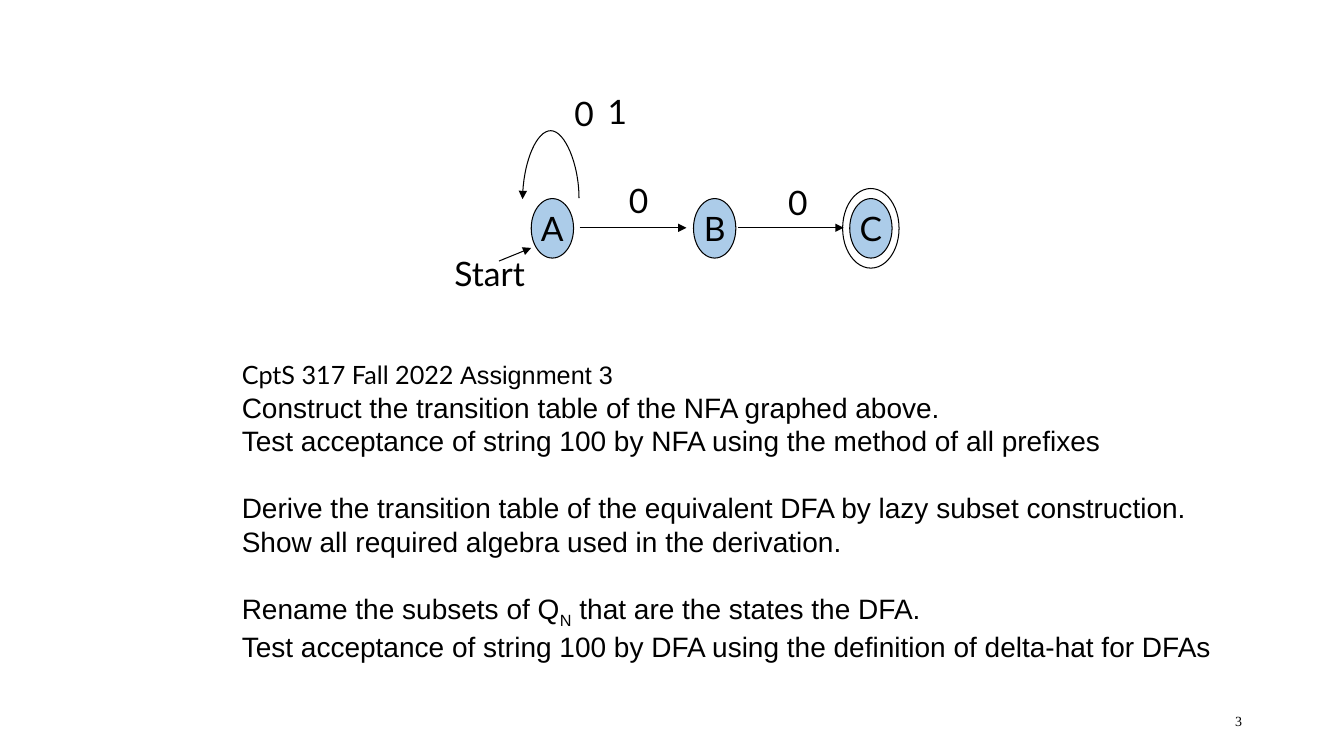
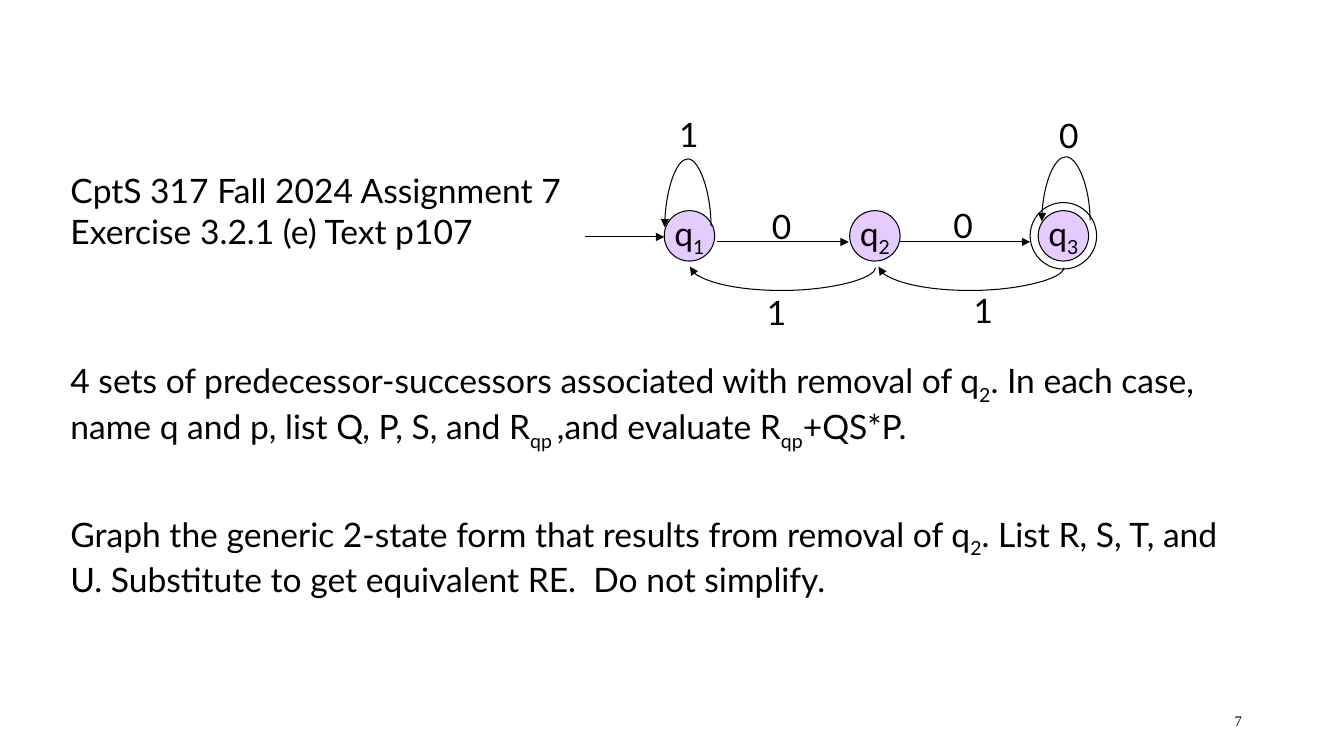
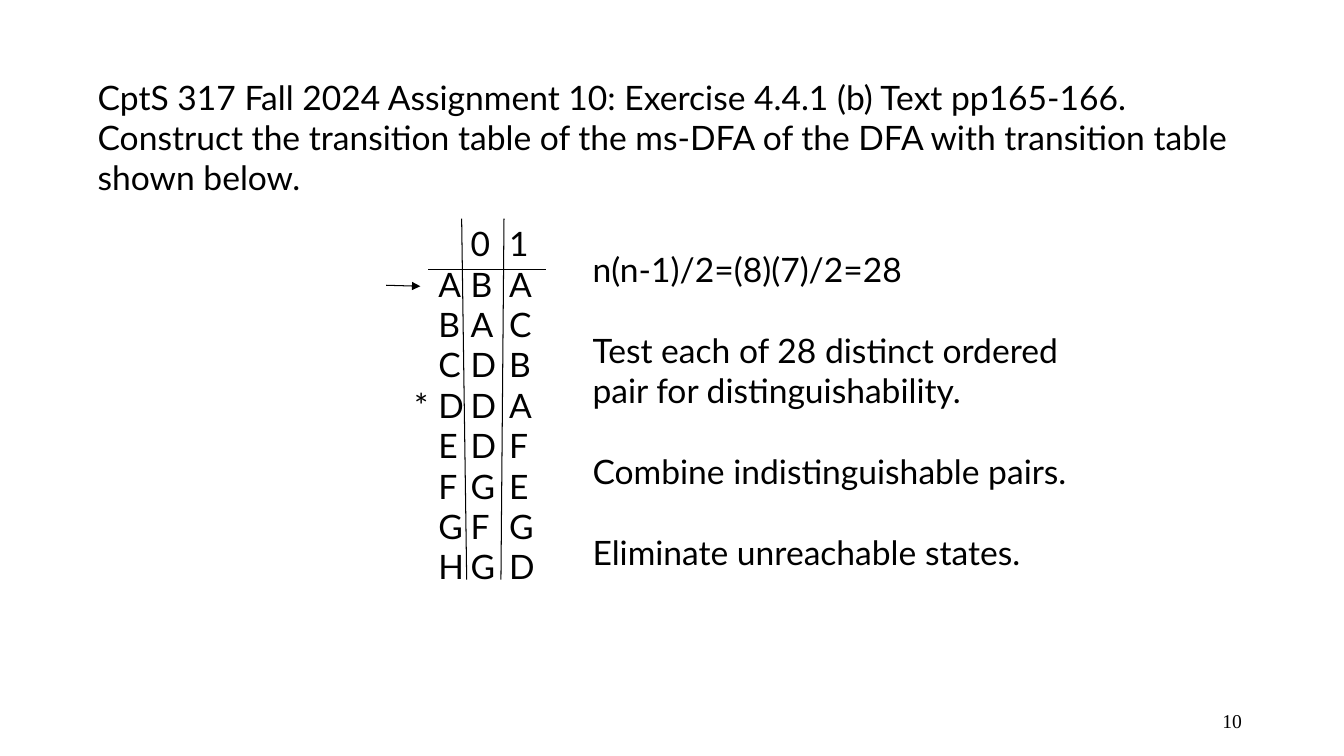
from dataclasses import dataclass

from lxml.etree import SubElement
from pptx import Presentation
from pptx.dml.color import RGBColor
from pptx.enum.shapes import MSO_CONNECTOR, MSO_SHAPE
from pptx.enum.text import MSO_ANCHOR, PP_ALIGN
from pptx.oxml.ns import qn
from pptx.util import Pt

EMU_PER_PX = 9144  # 100 px to the inch


@dataclass(frozen=True)
class Theme:
    ink: str = "000000"
    blue: str = "5B9BD5"
    violet: str = "CC99FF"
    state_opacity: int = 50
    line_width: float = 0.75
    sans: str = "Lato"
    plain: str = "Arial"
    serif: str = "Times New Roman"
    body: int = 24
    task: int = 20
    course: int = 18


THEME = Theme()


@dataclass
class Run:
    text: str
    font: str = THEME.sans
    size: float = THEME.body
    subscript: bool = False


@dataclass
class Line:
    runs: list
    before: int = 0  # points
    spacing: int = 0  # exact line height in points, 0 for single


def px(length):
    return length * EMU_PER_PX


def color(value):
    return RGBColor.from_string(value)


def marked(text, font=THEME.sans, size=THEME.body):
    """Split text into runs; the parts between ~ signs are subscripts."""
    return [Run(part, font, size, index % 2 == 1)
            for index, part in enumerate(text.split("~")) if part]


# Text

def add_runs(paragraph, runs):
    for item in runs:
        run = paragraph.add_run()
        run.text = item.text
        run.font.name = item.font
        run.font.size = Pt(item.size)
        run.font.color.rgb = color(THEME.ink)
        if item.subscript:
            run.font._element.set("baseline", "-25000")


def add_text(slide, left, top, width, height, lines,
             align=PP_ALIGN.LEFT, anchor=MSO_ANCHOR.TOP):
    box = slide.shapes.add_textbox(px(left), px(top), px(width), px(height))
    frame = box.text_frame
    frame.word_wrap = True
    frame.vertical_anchor = anchor
    for index, line in enumerate(lines):
        paragraph = frame.add_paragraph() if index else frame.paragraphs[0]
        paragraph.alignment = align
        paragraph.space_before = Pt(line.before)
        if line.spacing:
            paragraph.line_spacing = Pt(line.spacing)
        add_runs(paragraph, line.runs)


def add_label(slide, left, top, text, width=45):
    add_text(slide, left, top, width, 50, [Line(marked(text))])


# Lines

def style_connector(connector, arrow):
    connector.line.color.rgb = color(THEME.ink)
    connector.line.width = Pt(THEME.line_width)
    if arrow:
        SubElement(connector.line._get_or_add_ln(), qn("a:tailEnd"), type="triangle")
    SubElement(connector._element.spPr, qn("a:effectLst"))


def add_straight(slide, begin_x, begin_y, end_x, end_y, arrow=True):
    connector = slide.shapes.add_connector(
        MSO_CONNECTOR.STRAIGHT, px(begin_x), px(begin_y), px(end_x), px(end_y))
    style_connector(connector, arrow)


def add_curve(slide, begin_x, end_x, y, depth):
    """Arrow from right to left, bulging up (depth > 0) or down (depth < 0)."""
    upward = depth > 0
    center = (begin_x + end_x) // 2
    half = (begin_x - end_x) // 2
    first, last = (y + half, y - half) if upward else (y - half, y + half)
    connector = slide.shapes.add_connector(
        MSO_CONNECTOR.CURVE, px(center + 1), px(first), px(center), px(last))
    properties = connector._element.spPr
    # The connector is one px thick and turned, so its bend is depth times that
    properties.find(qn("a:xfrm")).set("rot", "16200000" if upward else "5400000")
    adjustments = properties.find(qn("a:prstGeom")).find(qn("a:avLst"))
    SubElement(adjustments, qn("a:gd"), name="adj1", fmla=f"val {-abs(depth) * 100000}")
    style_connector(connector, arrow=True)


# Automaton

def add_ellipse(slide, left, top, width, height, fill=None):
    shape = slide.shapes.add_shape(
        MSO_SHAPE.OVAL, px(left), px(top), px(width), px(height))
    shape.shadow.inherit = False
    shape.line.color.rgb = color(THEME.ink)
    shape.line.width = Pt(THEME.line_width)
    if fill:
        shape.fill.solid()
        shape.fill.fore_color.rgb = color(fill)
        tint = shape._element.spPr.find(qn("a:solidFill"))[0]
        SubElement(tint, qn("a:alpha"), val=str(THEME.state_opacity * 1000))
    else:
        shape.fill.background()
    return shape


def add_automaton(slide, left, top, states, state_top, state_size, ring, fill,
                  arrows, curves, labels):
    """States are (x, name); the last one is accepting and gets a ring."""
    width, height = state_size
    for x, name in states:
        shape = add_ellipse(slide, left + x, top + state_top, width, height, fill)
        frame = shape.text_frame
        frame.word_wrap = False
        frame.vertical_anchor = MSO_ANCHOR.MIDDLE
        frame.paragraphs[0].alignment = PP_ALIGN.CENTER
        add_runs(frame.paragraphs[0], marked(name))
    pad_x, pad_y = ring
    add_ellipse(slide, left + states[-1][0] - pad_x, top + state_top - pad_y,
                width + 2 * pad_x, height + 2 * pad_y)
    for begin_x, begin_y, end_x, end_y in arrows:
        add_straight(slide, left + begin_x, top + begin_y, left + end_x, top + end_y)
    for begin_x, end_x, y, depth in curves:
        add_curve(slide, left + begin_x, left + end_x, top + y, depth)
    for x, y, text in labels:
        add_label(slide, left + x, top + y, text)


# Transition table

def add_transition_table(slide, left, top, rows):
    columns, header_height, row_height = (35, 40, 42), 45, 40
    margins = (10, 7, 5)
    width = sum(columns)
    height = header_height + row_height * (len(rows) - 1)
    frame = slide.shapes.add_table(
        len(rows), len(columns), px(left), px(top), px(width), px(height))
    table = frame.table
    table.first_row = table.horz_banding = False
    for column, column_width in zip(table.columns, columns):
        column.width = px(column_width)
    for row_index, row in enumerate(rows):
        table.rows[row_index].height = px(row_height if row_index else header_height)
        for column_index, text in enumerate(row):
            cell = table.cell(row_index, column_index)
            cell.margin_left = px(margins[column_index])
            cell.margin_right = cell.margin_top = cell.margin_bottom = 0
            cell.vertical_anchor = MSO_ANCHOR.BOTTOM
            cell.fill.background()
            add_runs(cell.text_frame.paragraphs[0], marked(text))
    # Rules, the upright ones slightly slanted
    for begin_x, begin_y, end_x, end_y in (
            (33, 0, 38, 358), (75, 0, 72, 358), (0, 50, width, 50)):
        add_straight(slide, left + begin_x, top + begin_y,
                     left + end_x, top + end_y, arrow=False)
    # Marks for the start state and the accepting state
    add_straight(slide, left - 42, top + 66, left - 8, top + 67)
    add_label(slide, left - 24, top + 160, "*")


# Slides

def new_slide(presentation, number, number_size):
    slide = presentation.slides.add_slide(presentation.slide_layouts[6])
    add_text(slide, 942, 695, 300, 40,
             [Line([Run(number, THEME.serif, number_size)])],
             PP_ALIGN.RIGHT, MSO_ANCHOR.MIDDLE)
    return slide


def build_nfa_slide(presentation):
    slide = new_slide(presentation, "3", 10)
    tasks = [
        ("Construct the transition table of the NFA graphed above.", 0),
        ("Test acceptance of string 100 by NFA using the method of all prefixes", 0),
        ("Derive the transition table of the equivalent DFA by lazy subset construction.", 24),
        ("Show all required algebra used in the derivation.", 0),
        ("Rename the subsets of Q~N~ that are the states the DFA.", 27),
        ("Test acceptance of string 100 by DFA using the definition of delta-hat for DFAs", 0),
    ]
    heading = Line([Run("CptS 317 Fall 2022 ", size=THEME.course),
                    Run("Assignment 3", THEME.plain, THEME.course)])
    add_text(slide, 230, 352, 1011, 343, [heading] + [
        Line(marked(text, THEME.plain, THEME.task), before, 24) for text, before in tasks])
    add_automaton(
        slide, 441, 85,
        states=[(86, "A"), (247, "B"), (402, "C")],
        state_top=112, state_size=(42, 59), ring=(7, 10), fill=THEME.blue,
        arrows=[(54, 174, 86, 161), (134, 141, 240, 141), (291, 141, 396, 141)],
        curves=[(133, 77, 112, 68)],
        labels=[(119, 2, "0"), (152, 0, "1"), (173, 89, "0"), (331, 91, "0")])
    add_label(slide, 441, 246, "Start", 95)


def build_elimination_slide(presentation):
    slide = new_slide(presentation, "7", 10.5)
    add_text(slide, 60, 164, 1182, 431, [
        Line(marked("CptS 317 Fall 2024 Assignment 7")),
        Line(marked("Exercise 3.2.1 (e) Text p107")),
        Line(marked("4 sets of predecessor-successors associated with removal of q~2~. "
                    "In each case, name q and p, list Q, P, S, and R~qp ~,and evaluate "
                    "R~qp~+QS*P."), 78),
        Line(marked("Graph the generic 2-state form that results from removal of q~2~. "
                    "List R, S, T, and U. Substitute to get equivalent RE.  "
                    "Do not simplify."), 44),
    ])
    add_automaton(
        slide, 580, 108,
        states=[(79, "q~1~"), (263, "q~2~"), (450, "q~3~")],
        state_top=101, state_size=(50, 50), ring=(8, 8), fill=THEME.violet,
        arrows=[(0, 127, 79, 127), (131, 132, 262, 132), (312, 132, 442, 132)],
        curves=[(126, 79, 117, 68), (501, 453, 111, 64),
                (288, 104, 157, -23), (475, 291, 157, -23)],
        labels=[(84, 0, "1"), (461, 1, "0"), (176, 91, "0"), (356, 90, "0"),
                (171, 177, "1"), (376, 175, "1")])


def build_minimization_slide(presentation):
    slide = new_slide(presentation, "10", 14)
    add_text(slide, 87, 71, 1155, 131, [Line(marked(
        "CptS 317 Fall 2024 Assignment 10: Exercise 4.4.1 (b) Text pp165-166. "
        "Construct the transition table of the ms-DFA of the DFA with transition "
        "table shown below."))])
    transitions = "ABA BAC CDB DDA EDF FGE GFG HGD".split()
    add_transition_table(slide, 425, 217, [("", "0", "1")] + transitions)
    steps = [
        "n(n-1)/2=(8)(7)/2=28",
        "Test each of 28 distinct ordered pair for distinguishability.",
        "Combine indistinguishable pairs.",
        "Eliminate unreachable states.",
    ]
    add_text(slide, 578, 242, 498, 333, [
        Line(marked(step), 29 if index else 0) for index, step in enumerate(steps)])


def main():
    presentation = Presentation()
    presentation.slide_width = px(4000) // 3  # 16:9
    presentation.slide_height = px(750)
    build_nfa_slide(presentation)
    build_elimination_slide(presentation)
    build_minimization_slide(presentation)
    presentation.save("out.pptx")


if __name__ == "__main__":
    main()
